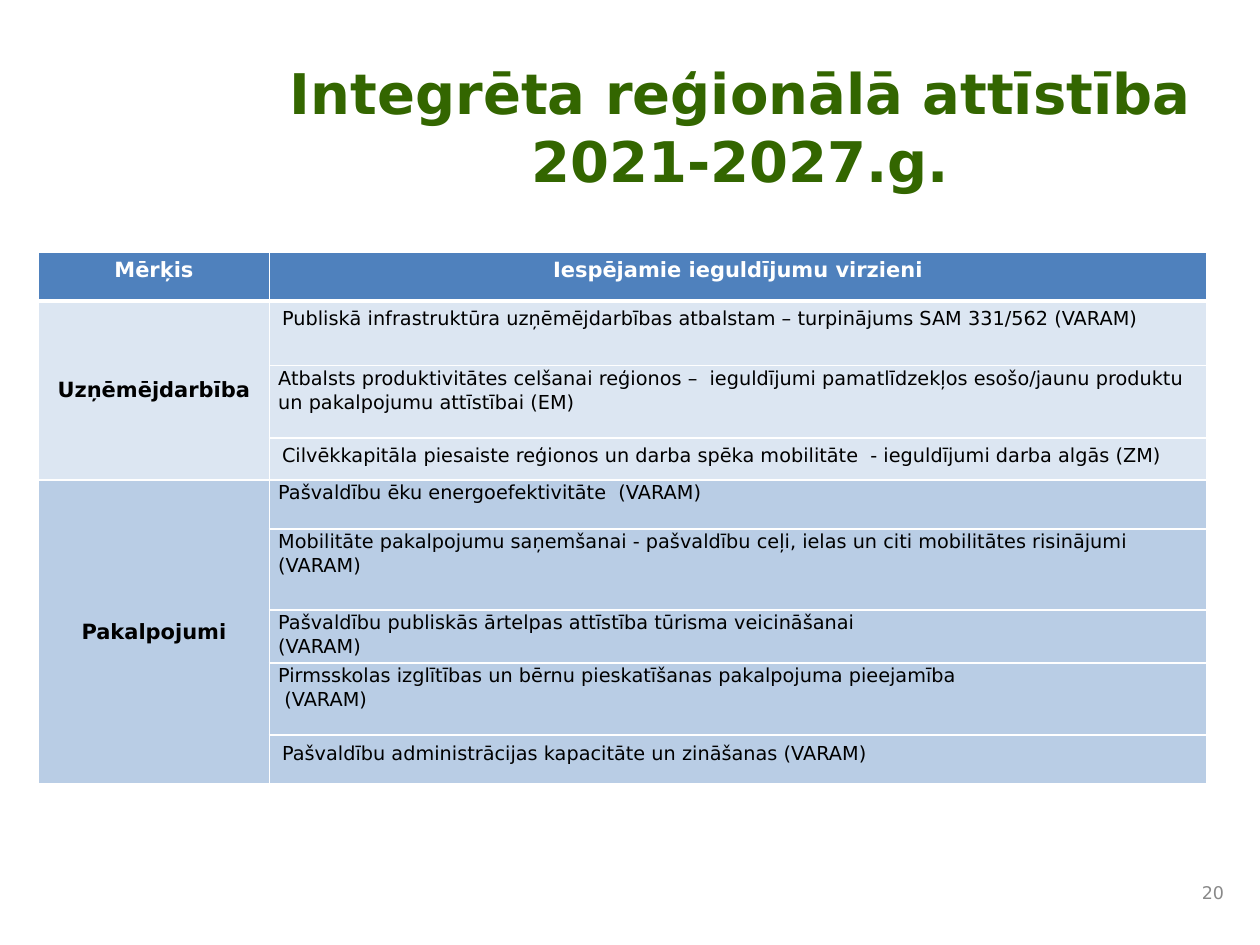
"""Build the slide on integrated regional development in 2021-2027."""
from dataclasses import dataclass

from lxml import etree
from pptx import Presentation
from pptx.dml.color import RGBColor
from pptx.enum import text as t
from pptx.oxml import ns
from pptx.util import Pt

FONT = "DejaVu Sans"
WHITE, BLACK, GREEN, GREY = "FFFFFF", "000000", "336600", "898989"
HEADER_BLUE, PALE_BLUE, MID_BLUE = "4F81BD", "DCE6F2", "B9CDE5"
HEADER_HEIGHT = 28
COLUMN_WIDTHS = (132, 535.5)


@dataclass
class Direction:
    text: str
    height: float
    tight: bool = True
    spacing: float = 1.07


@dataclass
class Goal:
    name: str
    fill: str
    directions: list[Direction]


GOALS = [
    Goal("Uzņēmējdarbība", PALE_BLUE, [
        Direction("Publiskā infrastruktūra uzņēmējdarbības atbalstam – turpinājums "
                  "SAM 331/562 (VARAM)", 37, tight=False, spacing=1),
        Direction("Atbalsts produktivitātes celšanai reģionos –  ieguldījumi pamatlīdzekļos "
                  "esošo/jaunu produktu un pakalpojumu attīstībai (EM)", 41.3),
        Direction("Cilvēkkapitāla piesaiste reģionos un darba spēka mobilitāte  - "
                  "ieguldījumi darba algās (ZM)", 24, tight=False, spacing=1),
    ]),
    Goal("Pakalpojumi", MID_BLUE, [
        Direction("Pašvaldību ēku energoefektivitāte  (VARAM)", 28),
        Direction("Mobilitāte pakalpojumu saņemšanai - pašvaldību ceļi, ielas un citi "
                  "mobilitātes risinājumi (VARAM)", 46.3),
        Direction("Pašvaldību publiskās ārtelpas attīstība tūrisma veicināšanai\n(VARAM)", 30.3),
        Direction("Pirmsskolas izglītības un bērnu pieskatīšanas pakalpojuma pieejamība\n"
                  " (VARAM)", 41.2),
        Direction("Pašvaldību administrācijas kapacitāte un zināšanas (VARAM)", 28, tight=False),
    ]),
]


def colour(value: str) -> RGBColor:
    return RGBColor.from_string(value)


def write(frame, content: str, size: float, ink: str, bold: bool = False,
          align=t.PP_ALIGN.LEFT, spacing: float = 1) -> None:
    frame.text = content
    for paragraph in frame.paragraphs:
        paragraph.alignment = align
        paragraph.line_spacing = spacing
        for run in paragraph.runs:
            run.font.name, run.font.size, run.font.bold = FONT, Pt(size), bold
            run.font.color.rgb = colour(ink)


def paint(cell, fill: str, bottom: float = 1, top: float = 1) -> None:
    properties = cell._tc.get_or_add_tcPr()
    for side, width in (("L", 1), ("R", 1), ("T", top), ("B", bottom)):
        line = etree.SubElement(properties, ns.qn(f"a:ln{side}"), w=str(Pt(width)))
        solid = etree.SubElement(line, ns.qn("a:solidFill"))
        etree.SubElement(solid, ns.qn("a:srgbClr"), val=WHITE)
    cell.fill.solid()
    cell.fill.fore_color.rgb = colour(fill)


def add_title(slide) -> None:
    title = slide.shapes.title
    title.left, title.top, title.width, title.height = Pt(150), Pt(30), Pt(546.5), Pt(78)
    frame = title.text_frame
    frame.word_wrap = True
    frame.auto_size = t.MSO_AUTO_SIZE.NONE
    frame.vertical_anchor = t.MSO_ANCHOR.TOP
    write(frame, "Integrēta reģionālā attīstība 2021-2027.g.", 32, GREEN, True, t.PP_ALIGN.CENTER)


def add_page_number(slide) -> None:
    frame = slide.shapes.add_textbox(Pt(672), Pt(498), Pt(34.5), Pt(24)).text_frame
    frame.word_wrap = True
    frame.vertical_anchor = t.MSO_ANCHOR.MIDDLE
    write(frame, "20", 10, GREY, align=t.PP_ALIGN.RIGHT)


def add_goals(slide) -> None:
    heights = [HEADER_HEIGHT] + [d.height for goal in GOALS for d in goal.directions]
    table = slide.shapes.add_table(len(heights), len(COLUMN_WIDTHS), Pt(22), Pt(144),
                                   Pt(sum(COLUMN_WIDTHS)), Pt(sum(heights))).table
    for column, width in zip(table.columns, COLUMN_WIDTHS):
        column.width = Pt(width)
    for row, height in zip(table.rows, heights):
        row.height = Pt(height)

    for cell, heading in zip(table.rows[0].cells, ("Mērķis", "Iespējamie ieguldījumu virzieni")):
        paint(cell, HEADER_BLUE, bottom=3)
        write(cell.text_frame, heading, 12, WHITE, True, t.PP_ALIGN.CENTER)

    first = 1
    for goal in GOALS:
        goal_cell = table.cell(first, 0)
        for row, direction in enumerate(goal.directions, first):
            for cell in table.rows[row].cells:
                paint(cell, goal.fill, top=3 if row == 1 else 1)
            cell = table.cell(row, 1)
            write(cell.text_frame, direction.text, 11, BLACK, spacing=direction.spacing)
            if direction.tight:
                cell.margin_left = cell.margin_right = Pt(5)
                cell.margin_top = cell.margin_bottom = Pt(0)
        last = first + len(goal.directions) - 1
        goal_cell.merge(table.cell(last, 0))
        goal_cell.vertical_anchor = t.MSO_ANCHOR.MIDDLE
        write(goal_cell.text_frame, goal.name, 12, BLACK, True, t.PP_ALIGN.CENTER)
        first = last + 1


def main() -> None:
    deck = Presentation()
    deck.slide_width, deck.slide_height = Pt(720), Pt(540)
    slide = deck.slides.add_slide(deck.slide_layouts[5])
    add_title(slide)
    add_goals(slide)
    add_page_number(slide)
    deck.save("out.pptx")


if __name__ == "__main__":
    main()
